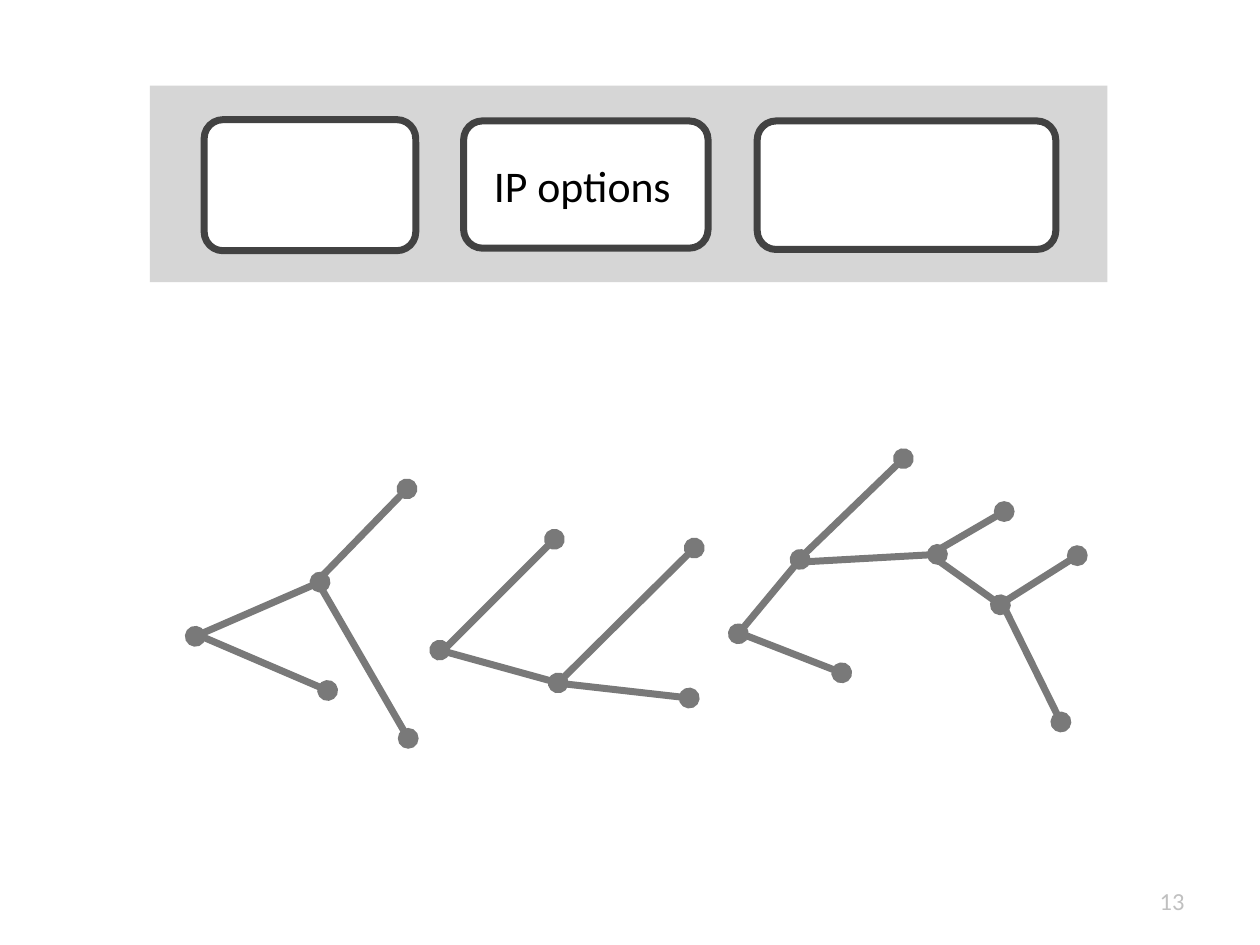
from dataclasses import dataclass

from lxml.etree import SubElement
from pptx import Presentation
from pptx.dml.color import RGBColor
from pptx.enum.shapes import MSO_CONNECTOR as Connector, MSO_SHAPE as Shape
from pptx.enum.text import MSO_ANCHOR as Anchor, MSO_AUTO_SIZE as AutoSize, PP_ALIGN as Align
from pptx.oxml.ns import qn
from pptx.util import Inches, Pt


@dataclass(frozen=True)
class Theme:
    font: str = "Calibri"
    band: RGBColor = RGBColor(0xD6, 0xD6, 0xD6)
    box: RGBColor = RGBColor(0xFF, 0xFF, 0xFF)
    outline: RGBColor = RGBColor(0x42, 0x42, 0x42)
    branch: RGBColor = RGBColor(0x79, 0x79, 0x79)
    text: RGBColor = RGBColor(0x00, 0x00, 0x00)
    number: RGBColor = RGBColor(0xC0, 0xC0, 0xC0)
    stroke: Pt = Pt(4)
    label_size: Pt = Pt(25)
    number_size: Pt = Pt(14)


theme = Theme()


def add_block(slide, kind, bounds, fill):
    shape = slide.shapes.add_shape(kind, *map(Inches, bounds))
    shape.shadow.inherit = False
    shape.fill.solid()
    shape.fill.fore_color.rgb = fill
    return shape


def add_text(slide, text, bounds, frame_format, font_format, color, align):
    frame = slide.shapes.add_textbox(*map(Inches, bounds)).text_frame
    for name, value in frame_format.items():
        setattr(frame, name, value)
    paragraph = frame.paragraphs[0]
    paragraph.alignment = align
    run = paragraph.add_run()
    run.text = text
    for name, value in font_format.items():
        setattr(run.font, name, value)
    run.font.color.rgb = color


presentation = Presentation()
presentation.slide_width, presentation.slide_height = Inches(10), Inches(7.5)
slide = presentation.slides.add_slide(presentation.slide_layouts[6])

# Slide number
add_text(slide, "13", (7.17, 6.95, 2.33, 0.4),
         {"word_wrap": True, "vertical_anchor": Anchor.MIDDLE},
         {"name": theme.font, "size": theme.number_size}, theme.number, Align.RIGHT)

# Header band with its three fields
band = add_block(slide, Shape.RECTANGLE, (1.19, 0.68, 7.6, 1.56), theme.band)
band.line.fill.background()
for bounds in [(1.62, 0.95, 1.68, 1.04), (3.68, 0.96, 1.94, 1.01), (6.01, 0.96, 2.37, 1.02)]:
    field = add_block(slide, Shape.ROUNDED_RECTANGLE, bounds, theme.box)
    field.adjustments[0] = 0.15 / bounds[3]
    field.line.color.rgb = theme.outline
    field.line.width = theme.stroke

# Trees: each branch runs from a dotted node to its parent;
# the first-listed root branch also has a dot at the parent end
trees = [
    {"dotted_parent": (1.55, 5.05),
     "branches": [((2.54, 4.62), (1.55, 5.05)), ((2.6, 5.48), (1.55, 5.03)),
                  ((3.23, 3.88), (2.52, 4.61)), ((3.24, 5.86), (2.54, 4.65))]},
    {"dotted_parent": (3.49, 5.16),
     "branches": [((4.4, 4.28), (3.55, 5.13)), ((4.43, 5.42), (3.49, 5.16)),
                  ((5.51, 4.35), (4.43, 5.42)), ((5.47, 5.54), (4.41, 5.42))]},
    {"dotted_parent": (5.86, 5.03),
     "branches": [((6.35, 4.44), (5.86, 5.03)), ((7.17, 3.64), (6.34, 4.44)),
                  ((7.44, 4.4), (6.37, 4.46)), ((6.68, 5.34), (5.91, 5.04)),
                  ((7.97, 4.06), (7.42, 4.38)), ((7.94, 4.8), (7.42, 4.43)),
                  ((8.42, 5.73), (7.96, 4.8)), ((8.55, 4.41), (7.98, 4.77))]},
]
for tree in trees:
    group = slide.shapes.add_group_shape()
    for node, parent in tree["branches"]:
        branch = group.shapes.add_connector(Connector.STRAIGHT, *map(Inches, node + parent))
        branch.line.color.rgb = theme.branch
        branch.line.width = theme.stroke
        line = branch.line._get_or_add_ln()
        SubElement(line, qn("a:headEnd"), type="oval")
        if parent == tree["dotted_parent"]:
            SubElement(line, qn("a:tailEnd"), type="oval")
        SubElement(branch._element.spPr, qn("a:effectLst"))

# Field label
margins = dict.fromkeys(["margin_left", "margin_top", "margin_right", "margin_bottom"], Inches(0.04))
add_text(slide, "IP options", (3.88, 1.21, 1.51, 0.51),
         {"word_wrap": False, "vertical_anchor": Anchor.MIDDLE,
          "auto_size": AutoSize.SHAPE_TO_FIT_TEXT, **margins},
         {"name": theme.font, "size": theme.label_size}, theme.text, Align.LEFT)

presentation.save("out.pptx")
